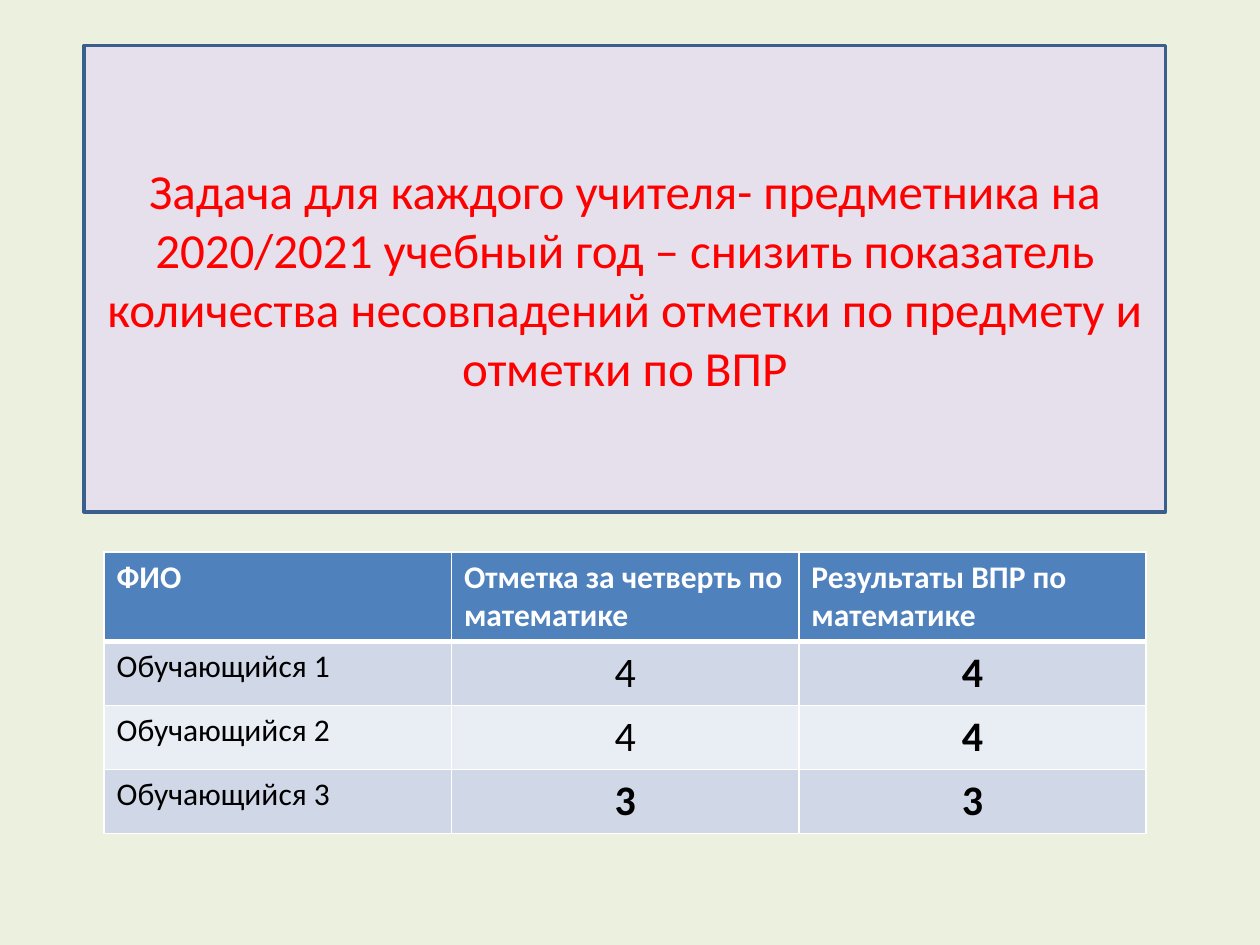
"""Build a slide with a task for teachers and a table that compares marks."""
from dataclasses import dataclass

from lxml import etree
from pptx import Presentation
from pptx.dml.color import RGBColor
from pptx.enum.shapes import MSO_SHAPE
from pptx.enum.text import MSO_ANCHOR, PP_ALIGN
from pptx.oxml.ns import qn
from pptx.util import Pt

RECT = MSO_SHAPE.RECTANGLE
MIDDLE = MSO_ANCHOR.MIDDLE
LEFT, CENTER = PP_ALIGN.LEFT, PP_ALIGN.CENTER
FONT = "Calibri"
COLORS = {
    "back": "EBF1DE", "panel": "E6E0EC", "frame": "3A5F8C",
    "task": "FF0000", "head": "4F81BD", "odd": "D0D8E8",
    "even": "E9EDF4", "white": "FFFFFF", "black": "000000",
}
TASK = (
    "Задача для каждого учителя- предметника на 2020/2021 учебный год – "
    "снизить показатель количества несовпадений отметки по предмету и "
    "отметки по ВПР"
)


@dataclass(frozen=True)
class Style:
    size: float
    color: str
    bold: bool = False
    align: PP_ALIGN = LEFT


HEAD = Style(18, "white", True)
NAME = Style(18, "black")
MARK = Style(24, "black", False, CENTER)
BOLD = Style(24, "black", True, CENTER)
ROWS = [
    [("ФИО", HEAD), ("Отметка за четверть по математике", HEAD),
     ("Результаты ВПР по математике", HEAD)],
    [("Обучающийся 1", NAME), ("4", MARK), ("4", BOLD)],
    [("Обучающийся 2", NAME), ("4", MARK), ("4", BOLD)],
    [("Обучающийся 3", NAME), ("3", BOLD), ("3", BOLD)],
]


def paint(fill, color: str) -> None:
    fill.solid()
    fill.fore_color.rgb = RGBColor.from_string(COLORS[color])


def write(frame, text: str, style: Style) -> None:
    para = frame.paragraphs[0]
    para.text = text
    para.alignment = style.align
    font = para.font
    font.name, font.size, font.bold = FONT, Pt(style.size), style.bold
    font.color.rgb = RGBColor.from_string(COLORS[style.color])


def edge(cell, side: str, width: float) -> None:
    props = cell._tc.get_or_add_tcPr()
    line = etree.SubElement(props, qn(f"a:ln{side}"), w=str(Pt(width)))
    fill = etree.SubElement(line, qn("a:solidFill"))
    etree.SubElement(fill, qn("a:srgbClr"), val=COLORS["white"])


def add_panel(slide) -> None:
    panel = slide.shapes.add_shape(RECT, Pt(48), Pt(26), Pt(618), Pt(266.5))
    panel.shadow.inherit = False
    paint(panel.fill, "panel")
    paint(panel.line.fill, "frame")
    panel.line.width = Pt(2)
    frame = panel.text_frame
    frame.word_wrap = True
    frame.vertical_anchor = MIDDLE
    write(frame, TASK, Style(28, "task", align=CENTER))


def add_marks(slide) -> None:
    table = slide.shapes.add_table(
        len(ROWS), len(ROWS[0]), Pt(59.5), Pt(315.5), Pt(595.5), Pt(160)
    ).table
    for r, row in enumerate(ROWS):
        table.rows[r].height = Pt(36.5 if r else 50.5)
        band = ("odd" if r % 2 else "even") if r else "head"
        for c, (text, style) in enumerate(row):
            cell = table.cell(r, c)
            edge(cell, "L", 1)
            edge(cell, "R", 1)
            edge(cell, "T", 3 if r == 1 else 1)
            edge(cell, "B", 1 if r else 3)
            paint(cell.fill, band)
            write(cell.text_frame, text, style)


def main() -> None:
    deck = Presentation()
    deck.slide_width, deck.slide_height = Pt(720), Pt(540)
    slide = deck.slides.add_slide(deck.slide_layouts[6])
    paint(slide.background.fill, "back")
    add_panel(slide)
    add_marks(slide)
    deck.save("out.pptx")


if __name__ == "__main__":
    main()
